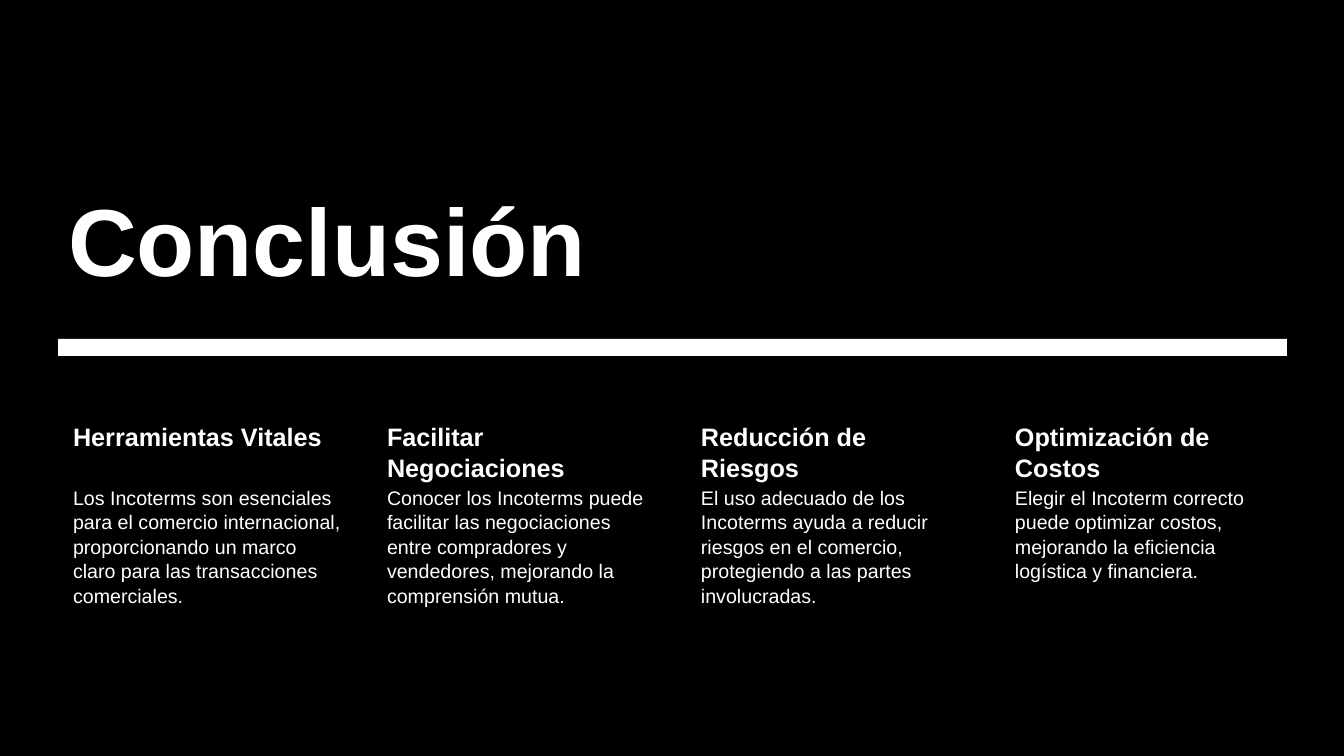
from dataclasses import dataclass

from pptx import Presentation
from pptx.dml.color import RGBColor
from pptx.enum.shapes import MSO_SHAPE
from pptx.enum.text import MSO_ANCHOR, MSO_AUTO_SIZE, PP_ALIGN
from pptx.util import Emu, Pt

RECT = MSO_SHAPE.RECTANGLE
LEFT = PP_ALIGN.LEFT
TOP, BOTTOM = MSO_ANCHOR.TOP, MSO_ANCHOR.BOTTOM
NO_FIT = MSO_AUTO_SIZE.NONE
TITLE_ONLY = 5
EMU_PER_PX = 914400 / 100.8


def px(n):
    return Emu(round(n * EMU_PER_PX))


@dataclass
class Theme:
    font: str = "Arial"
    back: RGBColor = RGBColor(0, 0, 0)
    ink: RGBColor = RGBColor(255, 255, 255)
    title: int = 68
    heading: int = 18
    body: int = 14
    line_spacing: float = 1.04


class SlideBuilder:
    def __init__(self, prs, theme):
        self.theme = theme
        self.s = prs.slides.add_slide(prs.slide_layouts[TITLE_ONLY])
        fill = self.s.background.fill
        fill.solid()
        fill.fore_color.rgb = theme.back

    def rect(self, x, y, w, h, color):
        sp = self.s.shapes.add_shape(RECT, px(x), px(y), px(w), px(h))
        sp.shadow.inherit = False
        sp.fill.solid()
        sp.fill.fore_color.rgb = color
        sp.line.fill.background()

    def set_text(self, sp, text, size, bold, frame):
        tf = sp.text_frame
        for name, value in {"word_wrap": True, "auto_size": NO_FIT, **frame}.items():
            setattr(tf, name, value)
        p = tf.paragraphs[0]
        p.alignment = LEFT
        p.line_spacing = self.theme.line_spacing
        r = p.add_run()
        r.text = text
        style = {"name": self.theme.font, "size": Pt(size), "bold": bold}
        for name, value in style.items():
            setattr(r.font, name, value)
        r.font.color.rgb = self.theme.ink

    def title(self, x, y, w, h, text):
        sp = self.s.shapes.title
        # Bring the title in front of the backdrop
        self.s.shapes.element.append(sp.element)
        box = {"left": px(x), "top": px(y), "width": px(w), "height": px(h)}
        for name, value in box.items():
            setattr(sp, name, value)
        self.set_text(sp, text, self.theme.title, True, {"vertical_anchor": BOTTOM})

    def text(self, x, y, w, h, text, size, bold, inset):
        sp = self.s.shapes.add_textbox(px(x), px(y), px(w), px(h))
        frame = {"vertical_anchor": TOP, "margin_left": px(15), "margin_top": px(inset),
                 "margin_right": px(inset), "margin_bottom": px(inset)}
        self.set_text(sp, text, size, bold, frame)


WIDTH, HEIGHT = 1344, 756
MARGIN, CONTENT_W = 58, 1229
COLUMN_W = 286
POINTS = [
    ("Herramientas Vitales",
     "Los Incoterms son esenciales para el comercio internacional, proporcionando "
     "un marco claro para las transacciones comerciales."),
    ("Facilitar Negociaciones",
     "Conocer los Incoterms puede facilitar las negociaciones entre compradores y "
     "vendedores, mejorando la comprensión mutua."),
    ("Reducción de Riesgos",
     "El uso adecuado de los Incoterms ayuda a reducir riesgos en el comercio, "
     "protegiendo a las partes involucradas."),
    ("Optimización de Costos",
     "Elegir el Incoterm correcto puede optimizar costos, mejorando la eficiencia "
     "logística y financiera."),
]


def main():
    prs = Presentation()
    prs.slide_width, prs.slide_height = px(WIDTH), px(HEIGHT)
    theme = Theme()
    slide = SlideBuilder(prs, theme)

    # Backdrop, divider and title
    slide.rect(0, 0, WIDTH, HEIGHT, theme.back)
    slide.rect(MARGIN, 339, CONTENT_W, 17, theme.ink)
    slide.title(MARGIN, 146, CONTENT_W, 155, "Conclusión")

    # Four equal columns, spread from margin to margin
    pitch = (CONTENT_W - COLUMN_W) // (len(POINTS) - 1)
    for i, (heading, body) in enumerate(POINTS):
        x = MARGIN + i * pitch
        slide.text(x, 417, COLUMN_W, 66, heading, theme.heading, True, 3)
        slide.text(x, 483, COLUMN_W, 206, body, theme.body, False, 2)

    prs.save("out.pptx")


if __name__ == "__main__":
    main()
